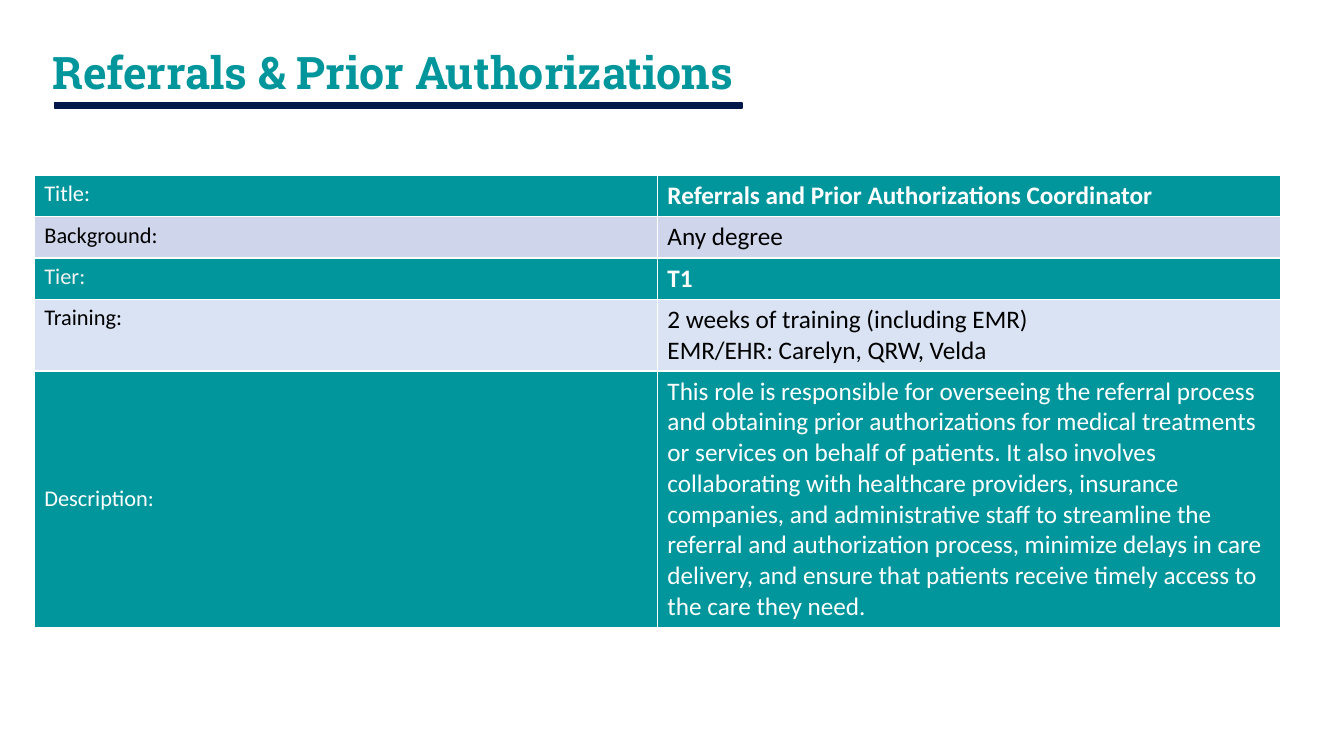
from pptx import Presentation
from pptx import util as u
from pptx.dml.color import RGBColor
from pptx.enum import shapes, text

PX = 9144  # 100 px to the inch
TEAL, NAVY, WHITE, BLACK = "00969C", "001749", "FFFFFF", "000000"
PALE_GREY, LAVENDER, PALE_BLUE = "F2F2F2", "CFD5EA", "DAE3F3"
DESCRIPTION = (
    "This role is responsible for overseeing the referral process and obtaining "
    "prior authorizations for medical treatments or services on behalf of patients. "
    "It also involves collaborating with healthcare providers, insurance companies, "
    "and administrative staff to streamline the referral and authorization process, "
    "minimize delays in care delivery, and ensure that patients receive timely access "
    "to the care they need."
)
# label, value, fill, label colour, value colour, value bold, height in px
ROWS = [
    ("Title:", "Referrals and Prior Authorizations Coordinator", TEAL, WHITE, WHITE, True, 41),
    ("Background:", "Any degree", LAVENDER, BLACK, BLACK, False, 41),
    ("Tier:", "T1", TEAL, PALE_GREY, WHITE, True, 41),
    ("Training:", "2 weeks of training (including EMR)\nEMR/EHR: Carelyn, QRW, Velda",
     PALE_BLUE, BLACK, BLACK, False, 71),
    ("Description:", DESCRIPTION, TEAL, WHITE, WHITE, False, 253),
]


def px(*lengths):
    return [u.Emu(length * PX) for length in lengths]


def colour(hex_string):
    return RGBColor.from_string(hex_string)


def format_text(frame, font_colour, **font_format):
    for paragraph in frame.paragraphs:
        paragraph.font.color.rgb = colour(font_colour)
        for name, value in font_format.items():
            setattr(paragraph.font, name, value)


def add_title(slide, wording):
    title = slide.shapes.title
    title.left, title.top, title.width, title.height = px(42, 0, 779, 148)
    frame = title.text_frame
    frame.text = wording
    frame.vertical_anchor = text.MSO_ANCHOR.MIDDLE
    frame.paragraphs[0].alignment = text.PP_ALIGN.LEFT
    frame.paragraphs[0].line_spacing = 0.9
    format_text(frame, TEAL, name="Roboto Slab", size=u.Pt(32), bold=True)


def add_rule(slide):
    rule = slide.shapes.add_shape(shapes.MSO_SHAPE.RECTANGLE, *px(54, 102, 682, 5))
    rule.shadow.inherit = False
    rule.fill.solid()
    rule.fill.fore_color.rgb = colour(NAVY)
    rule.line.color.rgb = colour(NAVY)
    rule.line.width = u.Pt(1)


def fill_cell(cell, wording, fill, font_colour, size, bold):
    cell.fill.solid()
    cell.fill.fore_color.rgb = colour(fill)
    cell.text_frame.text = wording
    format_text(cell.text_frame, font_colour, name="Calibri", size=u.Pt(size), bold=bold)


def add_role_table(slide):
    height = sum(row[-1] for row in ROWS)
    # The default table style supplies the white grid and the thick header rule
    table = slide.shapes.add_table(len(ROWS), 2, *px(34, 174, 1236, height)).table
    for index, (label, value, fill, label_colour, value_colour, bold, row_height) in enumerate(ROWS):
        table.rows[index].height = px(row_height)[0]
        fill_cell(table.cell(index, 0), label, fill, label_colour, 16, False)
        fill_cell(table.cell(index, 1), value, fill, value_colour, 18, bold)
    table.cell(len(ROWS) - 1, 0).vertical_anchor = text.MSO_ANCHOR.MIDDLE


def main():
    presentation = Presentation()
    presentation.slide_width, presentation.slide_height = px(1333, 750)
    slide = presentation.slides.add_slide(presentation.slide_layouts[5])
    add_title(slide, "Referrals & Prior Authorizations")
    add_rule(slide)
    add_role_table(slide)
    presentation.save("out.pptx")


if __name__ == "__main__":
    main()
